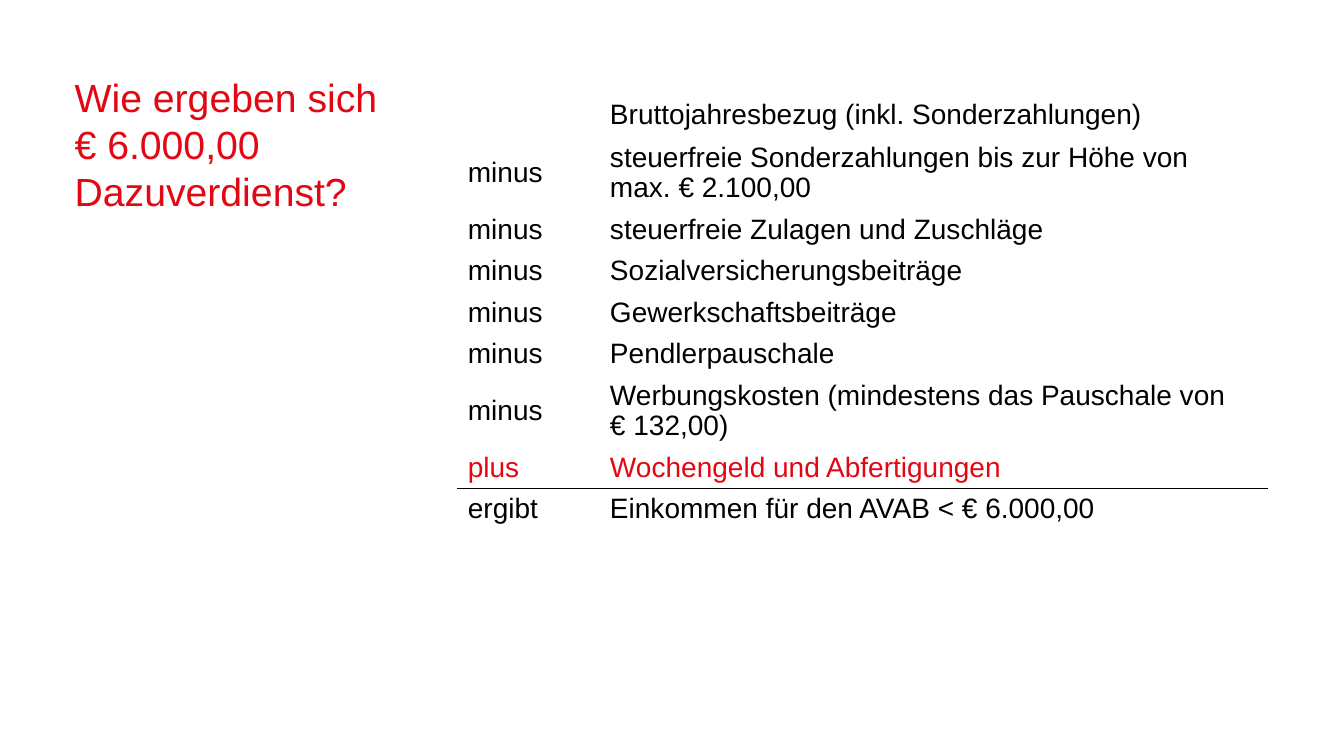
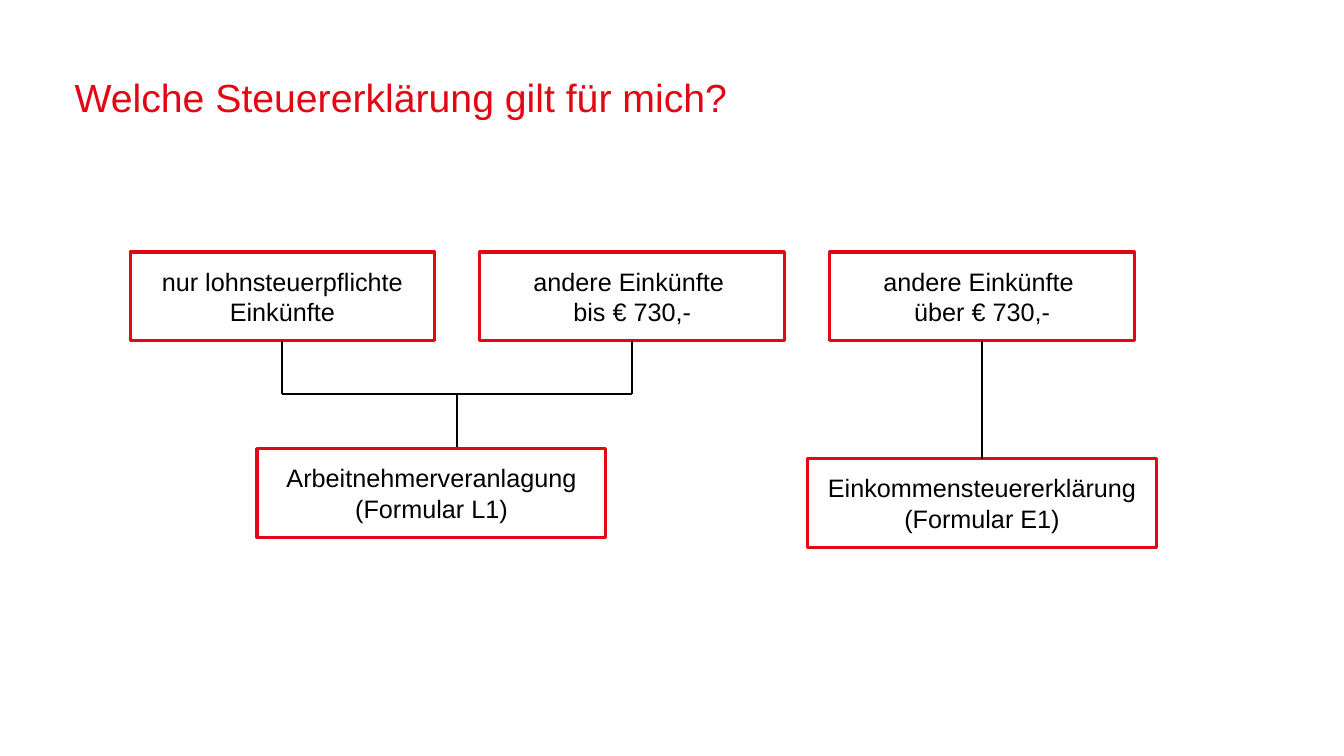
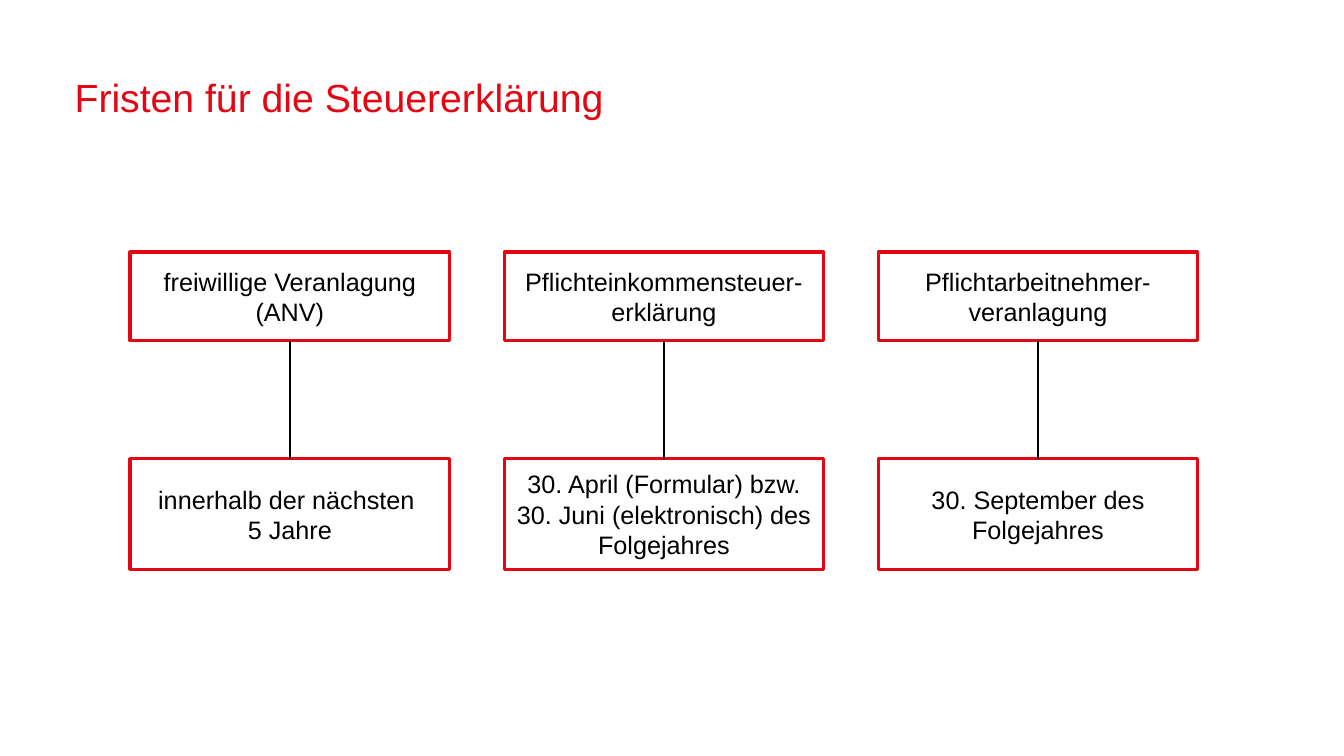
from dataclasses import dataclass

from lxml import etree
from pptx import Presentation
from pptx.dml.color import RGBColor
from pptx.enum.shapes import MSO_CONNECTOR, MSO_SHAPE
from pptx.enum.text import MSO_ANCHOR, MSO_AUTO_SIZE, PP_ALIGN
from pptx.oxml.ns import qn
from pptx.util import Inches, Pt

STRAIGHT = MSO_CONNECTOR.STRAIGHT
RECT = MSO_SHAPE.RECTANGLE
TOP, MIDDLE = MSO_ANCHOR.TOP, MSO_ANCHOR.MIDDLE
LEFT, CENTER = PP_ALIGN.LEFT, PP_ALIGN.CENTER
NO_AUTOFIT = MSO_AUTO_SIZE.NONE
TITLE_ONLY = 5
SITE_TOP, SITE_BOTTOM = 0, 2


@dataclass(frozen=True)
class Theme:
    """Colours, font, type sizes and line widths of the deck."""

    font: str = "Arial"
    red: str = "E30613"
    black: str = "000000"
    title: int = 28
    table: int = 20
    box: int = 18
    frame: float = 2.25
    link: float = 1.5
    rule: float = 1
    leading: float = 1.2
    table_leading: float = 0.97


THEME = Theme()
BOX_LEFT, BOX_TOP, BOX_HEIGHT = 1.29, 2.5, 0.88
LOWER_TOP = 4.55

INCOME_ROWS = [
    ("", "Bruttojahresbezug (inkl. Sonderzahlungen)"),
    ("minus", "steuerfreie Sonderzahlungen bis zur Höhe von \nmax. € 2.100,00"),
    ("minus", "steuerfreie Zulagen und Zuschläge"),
    ("minus", "Sozialversicherungsbeiträge"),
    ("minus", "Gewerkschaftsbeiträge"),
    ("minus", "Pendlerpauschale"),
    ("minus", "Werbungskosten (mindestens das Pauschale von \n€ 132,00)"),
    ("plus", "Wochengeld und Abfertigungen"),
    ("ergibt", "Einkommen für den AVAB < € 6.000,00"),
]
INCOME_KINDS = [
    "nur lohnsteuerpflichte Einkünfte",
    "andere Einkünfte \nbis € 730,-",
    "andere Einkünfte \nüber € 730,-",
]
DEADLINES = [
    ("freiwillige Veranlagung (ANV)", "innerhalb der nächsten \n5 Jahre"),
    ("Pflichteinkommensteuer-\nerklärung",
     "30. April (Formular) bzw. 30. Juni (elektronisch) des Folgejahres"),
    ("Pflichtarbeitnehmer-veranlagung", "30. September des Folgejahres"),
]


def write(tf, text, size, color, align, spacing):
    """Fill the first paragraph run by run, with a line break at each newline."""
    p = tf.paragraphs[0]
    p.alignment = align
    p.line_spacing = spacing
    p.font.size = Pt(size)
    for i, line in enumerate(text.split("\n") if text else []):
        if i:
            p.add_line_break()
        r = p.add_run()
        r.text = line
        r.font.name = THEME.font
        r.font.size = Pt(size)
        r.font.color.rgb = RGBColor.from_string(color)


def add_slide(prs, title, width, height):
    """Add a slide with its red title at the top left."""
    s = prs.slides.add_slide(prs.slide_layouts[TITLE_ONLY])
    sp = s.shapes.title
    sp.left, sp.top = Inches(0.64), Inches(0.68)
    sp.width, sp.height = Inches(width), Inches(height)
    tf = sp.text_frame
    tf.word_wrap = True
    tf.auto_size = NO_AUTOFIT
    tf.vertical_anchor = TOP
    write(tf, title, THEME.title, THEME.red, LEFT, Pt(THEME.title * THEME.leading))
    return s


def add_box(s, text, x, y, width, height=BOX_HEIGHT):
    """Add a red outlined box with centred text."""
    sp = s.shapes.add_shape(RECT, Inches(x), Inches(y), Inches(width), Inches(height))
    sp.shadow.inherit = False
    sp.fill.background()
    sp.line.color.rgb = RGBColor.from_string(THEME.red)
    sp.line.width = Pt(THEME.frame)
    tf = sp.text_frame
    tf.word_wrap = True
    tf.vertical_anchor = MIDDLE
    write(tf, text, THEME.box, THEME.black, CENTER, Pt(THEME.box * THEME.leading))
    return sp


def add_line(s, x1, y1, x2, y2):
    """Add a thin black line between two points in inches."""
    line = s.shapes.add_connector(STRAIGHT, *map(Inches, (x1, y1, x2, y2)))
    line.line.color.rgb = RGBColor.from_string(THEME.black)
    line.line.width = Pt(THEME.link)
    etree.SubElement(line._element.spPr, qn("a:effectLst"))
    return line


def link_boxes(s, upper, lower):
    """Connect the bottom of one box to the top of another."""
    line = add_line(s, 0, 0, 1, 1)
    line.begin_connect(upper, SITE_BOTTOM)
    line.end_connect(lower, SITE_TOP)


def set_border(cell, side):
    """Draw a black rule on one side of a cell."""
    ln = etree.Element(qn(f"a:{side}"), w=str(Pt(THEME.rule)))
    fill = etree.SubElement(ln, qn("a:solidFill"))
    etree.SubElement(fill, qn("a:srgbClr"), val=THEME.black)
    cell._tc.get_or_add_tcPr().insert(0, ln)


def add_income_table(s, rows):
    """Add the two-column calculation with a rule above the result row."""
    widths = (1.41, 6.62)
    heights = [0.72 if "\n" in label else 0.41 for _, label in rows]
    frame = s.shapes.add_table(len(rows), len(widths), Inches(4.54), Inches(0.92),
                               Inches(sum(widths)), Inches(sum(heights)))
    table = frame.table
    table.first_row = table.horz_banding = False
    for column, width in zip(table.columns, widths):
        column.width = Inches(width)
    sides = {len(rows) - 2: "lnB", len(rows) - 1: "lnT"}
    for i, texts in enumerate(rows):
        table.rows[i].height = Inches(heights[i])
        color = THEME.red if texts[0] == "plus" else THEME.black
        for j, text in enumerate(texts):
            cell = table.cell(i, j)
            cell.vertical_anchor = MIDDLE
            write(cell.text_frame, text, THEME.table, color, LEFT, THEME.table_leading)
            if i in sides:
                set_border(cell, sides[i])
            cell.fill.background()


def build_income(prs):
    """Build the slide on how the income limit is calculated."""
    s = add_slide(prs, "Wie ergeben sich \n€ 6.000,00 Dazuverdienst?", 3.72, 3.12)
    add_income_table(s, INCOME_ROWS)


def build_forms(prs):
    """Build the chart that leads from kinds of income to forms."""
    s = add_slide(prs, "Welche Steuererklärung gilt für mich?", 6.97, 1.26)
    width, pitch, form_width = 3.02, 3.47, 3.46
    form_top, bar_y = 4.45, 3.91
    kinds = [add_box(s, text, BOX_LEFT + i * pitch, BOX_TOP, width)
             for i, text in enumerate(INCOME_KINDS)]
    first = BOX_LEFT + width / 2
    second = first + pitch
    middle = (first + second) / 2
    for x in (first, second):
        add_line(s, x, BOX_TOP + BOX_HEIGHT, x, bar_y)
    add_line(s, first, bar_y, second, bar_y)
    add_line(s, middle, bar_y, middle, form_top)
    add_box(s, "Arbeitnehmerveranlagung\n(Formular L1)", 2.55, form_top, form_width)
    form = add_box(s, "Einkommensteuererklärung\n(Formular E1)",
                   8.01, LOWER_TOP, form_width)
    link_boxes(s, kinds[-1], form)


def build_deadlines(prs):
    """Build the slide that pairs each kind of return with its deadline."""
    s = add_slide(prs, "Fristen für die Steuererklärung", 5.63, 1.26)
    width, pitch = 3.17, 3.71
    for i, (kind, deadline) in enumerate(DEADLINES):
        x = BOX_LEFT + i * pitch
        upper = add_box(s, kind, x, BOX_TOP, width)
        lower = add_box(s, deadline, x, LOWER_TOP, width, 1.1)
        link_boxes(s, upper, lower)


def main():
    """Build and save the presentation."""
    prs = Presentation()
    prs.slide_width, prs.slide_height = Inches(13.33), Inches(7.5)
    build_income(prs)
    build_forms(prs)
    build_deadlines(prs)
    prs.save("out.pptx")


if __name__ == "__main__":
    main()
